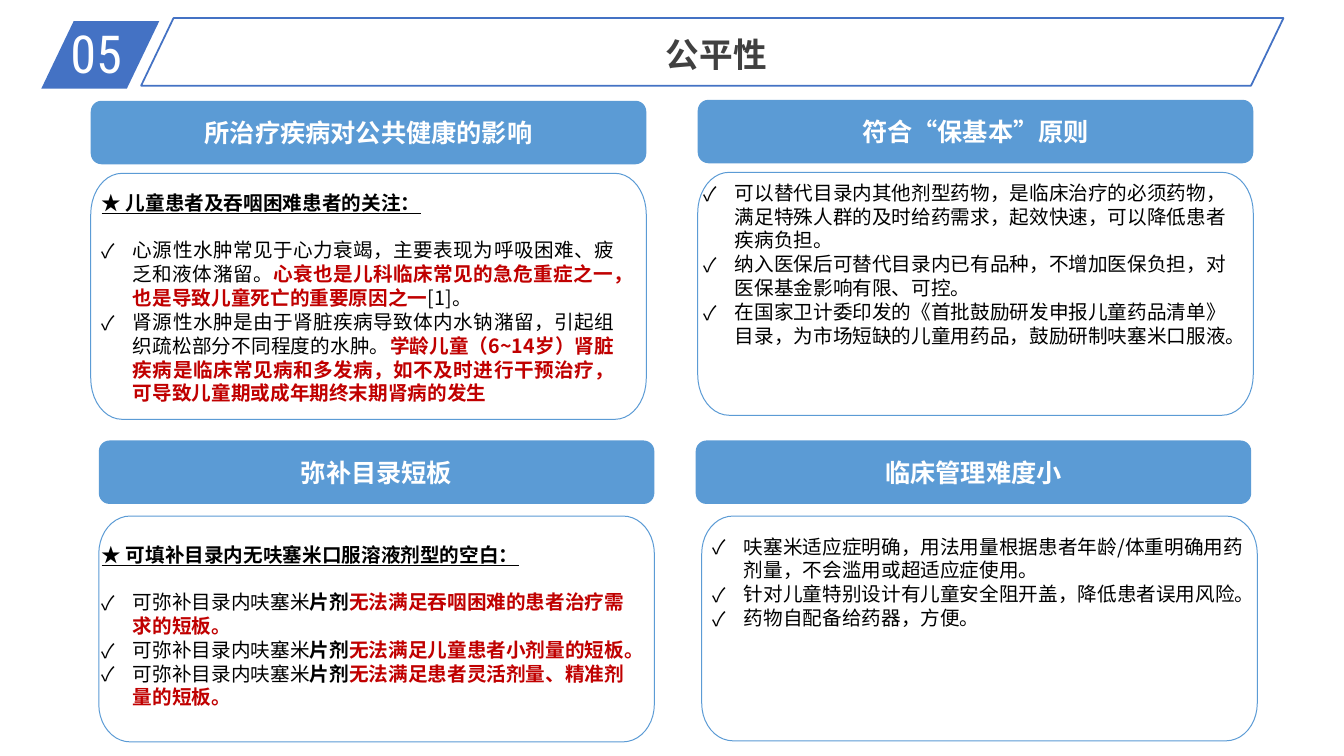
import math
from lxml import etree
from pptx import Presentation
from pptx import util as u
from pptx.dml.color import RGBColor
from pptx.enum import shapes, text
from pptx.oxml.ns import qn

COLORS = {"navy": "4472C4", "blue": "5B9BD5", "red": "C00000",
          "black": "000000", "title": "404040", "white": "FFFFFF"}
FONT = "Noto Sans CJK SC"
CARD_W, HEAD_H = 5.51, 0.63
AL = text.PP_ALIGN

STYLES = {"plain": ("black", False, False), "bold": ("black", True, False),
          "red": ("red", True, False), "lead": ("black", True, True)}


def rgb(name):
    return RGBColor.from_string(COLORS[name])


def paint(sp, fill=None, line=None, width=1):
    sp.shadow.inherit = False
    if fill:
        sp.fill.solid()
        sp.fill.fore_color.rgb = rgb(fill)
    else:
        sp.fill.background()
    if line:
        sp.line.color.rgb = rgb(line)
        sp.line.width = u.Pt(width)
    else:
        sp.line.fill.background()


def add_run(p, words, size, color, bold=False, underline=False, font=FONT):
    r = p.add_run()
    r.text = words
    r.font.size = u.Pt(size)
    r.font.bold = bold
    r.font.underline = underline
    r.font.name = font
    r.font.color.rgb = rgb(color)
    etree.SubElement(r.font._element, qn("a:ea")).set("typeface", font)


def add_check(p):
    pPr = p._p.get_or_add_pPr()
    pPr.set("marL", str(u.Inches(0.31)))
    pPr.set("indent", str(-u.Inches(0.31)))
    etree.SubElement(pPr, qn("a:buFont")).set("typeface", FONT)
    etree.SubElement(pPr, qn("a:buChar")).set("char", "✓")


def add_box(s, x, y, w, h):
    tf = s.shapes.add_textbox(*map(u.Inches, (x, y, w, h))).text_frame
    tf.word_wrap = True
    return tf


def add_slant(s, x, y, w, h, **look):
    sp = s.shapes.add_shape(shapes.MSO_SHAPE.PARALLELOGRAM,
                            *map(u.Inches, (x, y, w, h)))
    sp.adjustments[0] = 0.48
    paint(sp, **look)


def title_bar(s, x, y, number, title):
    add_slant(s, x, y + 0.03, 1.17, 0.67, fill="navy")
    tf = add_box(s, x + 0.19, y - 0.02, 1.12, 0.73)
    tf.vertical_anchor = text.MSO_ANCHOR.MIDDLE
    add_run(tf.paragraphs[0], number, 37.4, "white", font="Roboto Condensed")
    p = add_box(s, x + 2.54, y + 0.1, 8.31, 0.5).paragraphs[0]
    p.alignment = AL.CENTER
    p.line_spacing = u.Pt(29)
    add_run(p, title, 24, "title", True)
    add_slant(s, x + 0.99, y, 11.33, 0.67, line="navy", width=1.25)


def add_frame(s, x, y, w, h):
    rx, ry, steps = 0.31, h / 6, 10
    points = []
    for quarter, (cx, cy) in enumerate([(x + w - rx, y + h - ry), (x + rx, y + h - ry),
                                        (x + rx, y + ry), (x + w - rx, y + ry)]):
        for i in range(steps + 1):
            a = math.pi / 2 * (quarter + i / steps)
            points.append((u.Inches(cx + rx * math.cos(a)),
                           u.Inches(cy + ry * math.sin(a))))
    fb = s.shapes.build_freeform(*points[0])
    fb.add_line_segments(points[1:], close=True)
    paint(fb.convert_to_shape(), line="blue", width=0.72)


def card(s, head, frame, heading):
    sp = s.shapes.add_shape(shapes.MSO_SHAPE.ROUNDED_RECTANGLE,
                            *map(u.Inches, (*head, CARD_W, HEAD_H)))
    sp.adjustments[0] = 0.17
    paint(sp, fill="blue")
    tf = sp.text_frame
    tf.margin_left = tf.margin_right = tf.margin_top = tf.margin_bottom = 0
    tf.vertical_anchor = text.MSO_ANCHOR.MIDDLE
    p = tf.paragraphs[0]
    p.alignment = AL.CENTER
    add_run(p, heading, 18, "white", True)
    x, y, h = frame
    add_frame(s, x, y, CARD_W, h)


def body(s, box, items, lead=None, align=AL.LEFT):
    tf = add_box(s, *box)
    paragraphs = ([[(lead, "lead")]] if lead else []) + items
    for i, runs in enumerate(paragraphs):
        p = tf.paragraphs[0] if i == 0 else tf.add_paragraph()
        p.alignment = align
        p.line_spacing = u.Pt(17)
        if lead and i == 0:
            p.space_after = u.Pt(17)
        else:
            add_check(p)
        for words, style in runs:
            add_run(p, words, 14, *STYLES[style])


CARDS = [
    ((0.9, 1), (0.9, 1.72, 2.44), "所治疗疾病对公共健康的影响"),
    ((6.92, 0.99), (6.92, 1.71, 2.41), "符合“保基本”原则"),
    ((0.98, 4.37), (0.98, 5.12, 2.24), "弥补目录短板"),
    ((6.9, 4.37), (6.96, 5.12, 2.23), "临床管理难度小"),
]
HEALTH = [
    [("心源性水肿常见于心力衰竭，主要表现为呼吸困难、疲乏和液体潴留。", "plain"),
     ("心衰也是儿科临床常见的急危重症之一，也是导致儿童死亡的重要原因之一", "red"),
     ("[1]。", "plain")],
    [("肾源性水肿是由于肾脏疾病导致体内水钠潴留，引起组织疏松部分不同程度的水肿。", "plain"),
     ("学龄儿童（6~14岁）肾脏疾病是临床常见病和多发病，如不及时进行干预治疗，"
      "可导致儿童期或成年期终末期肾病的发生", "red")],
]
BASICS = [[(t, "plain")] for t in (
    "可以替代目录内其他剂型药物，是临床治疗的必须药物，满足特殊人群的及时给药需求，"
    "起效快速，可以降低患者疾病负担。",
    "纳入医保后可替代目录内已有品种，不增加医保负担，对医保基金影响有限、可控。",
    "在国家卫计委印发的《首批鼓励研发申报儿童药品清单》目录，为市场短缺的儿童用药品，"
    "鼓励研制呋塞米口服液。")]
GAPS = [[("可弥补目录内呋塞米", "plain"), ("片剂", "bold"), (t, "red")] for t in (
    "无法满足吞咽困难的患者治疗需求的短板。",
    "无法满足儿童患者小剂量的短板。",
    "无法满足患者灵活剂量、精准剂量的短板。")]
CLINIC = [[(t, "plain")] for t in (
    "呋塞米适应症明确，用法用量根据患者年龄/体重明确用药剂量，不会滥用或超适应症使用。",
    "针对儿童特别设计有儿童安全阻开盖，降低患者误用风险。",
    "药物自配备给药器，方便。")]


def main():
    prs = Presentation()
    prs.slide_width, prs.slide_height = u.Inches(13.33), u.Inches(7.5)
    s = prs.slides.add_slide(prs.slide_layouts[6])
    title_bar(s, 0.41, 0.18, "05", "公平性")
    for head, frame, heading in CARDS:
        card(s, head, frame, heading)
    body(s, (6.88, 1.74, CARD_W, 1.75), BASICS)
    body(s, (0.91, 5.33, CARD_W, 1.75), GAPS, "★ 可填补目录内无呋塞米口服溶液剂型的空白：")
    body(s, (6.97, 5.25, CARD_W, 1.04), CLINIC)
    body(s, (0.91, 1.84, 5.28, 2.22), HEALTH, "★ 儿童患者及吞咽困难患者的关注：", AL.JUSTIFY)
    prs.save("out.pptx")


if __name__ == "__main__":
    main()
